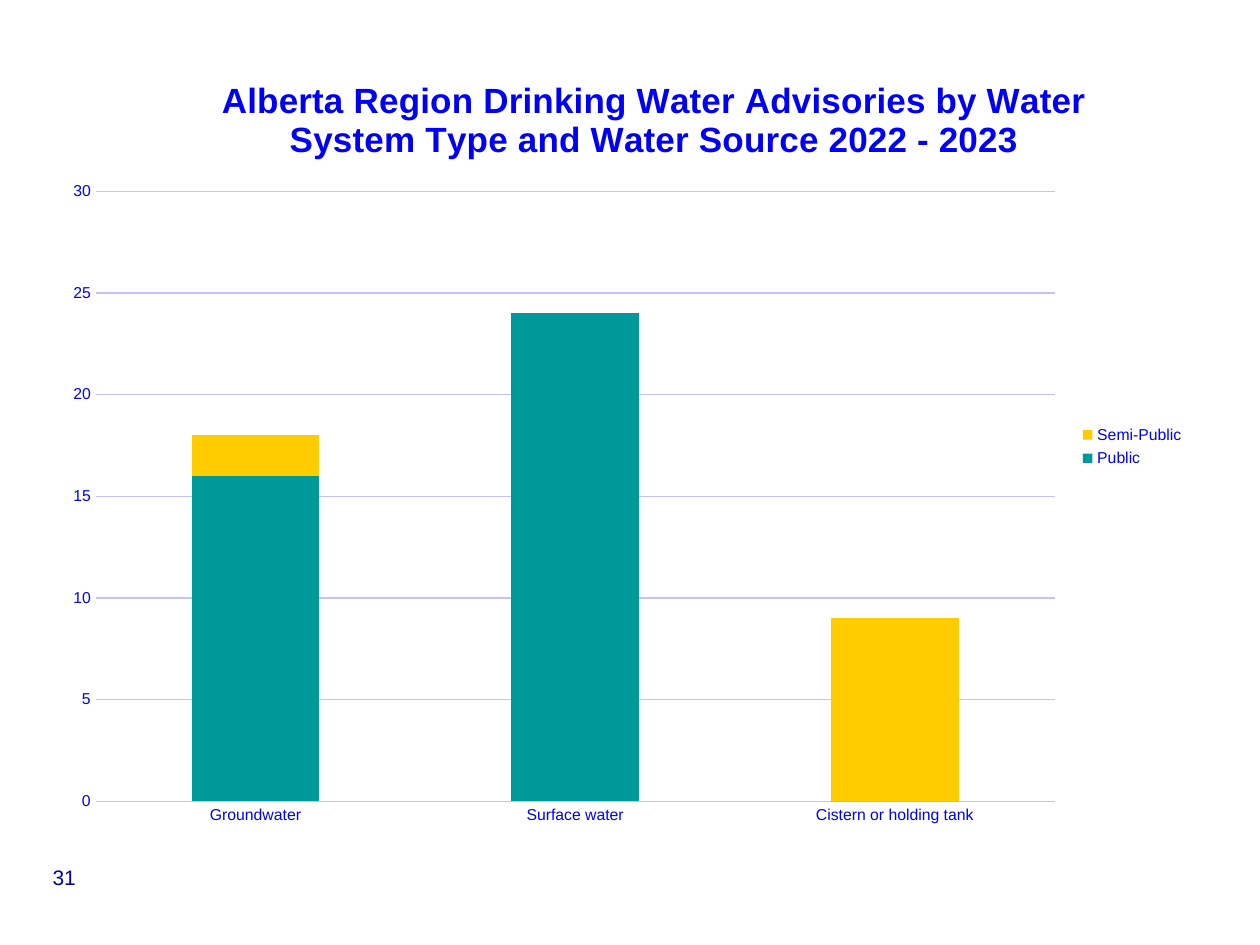
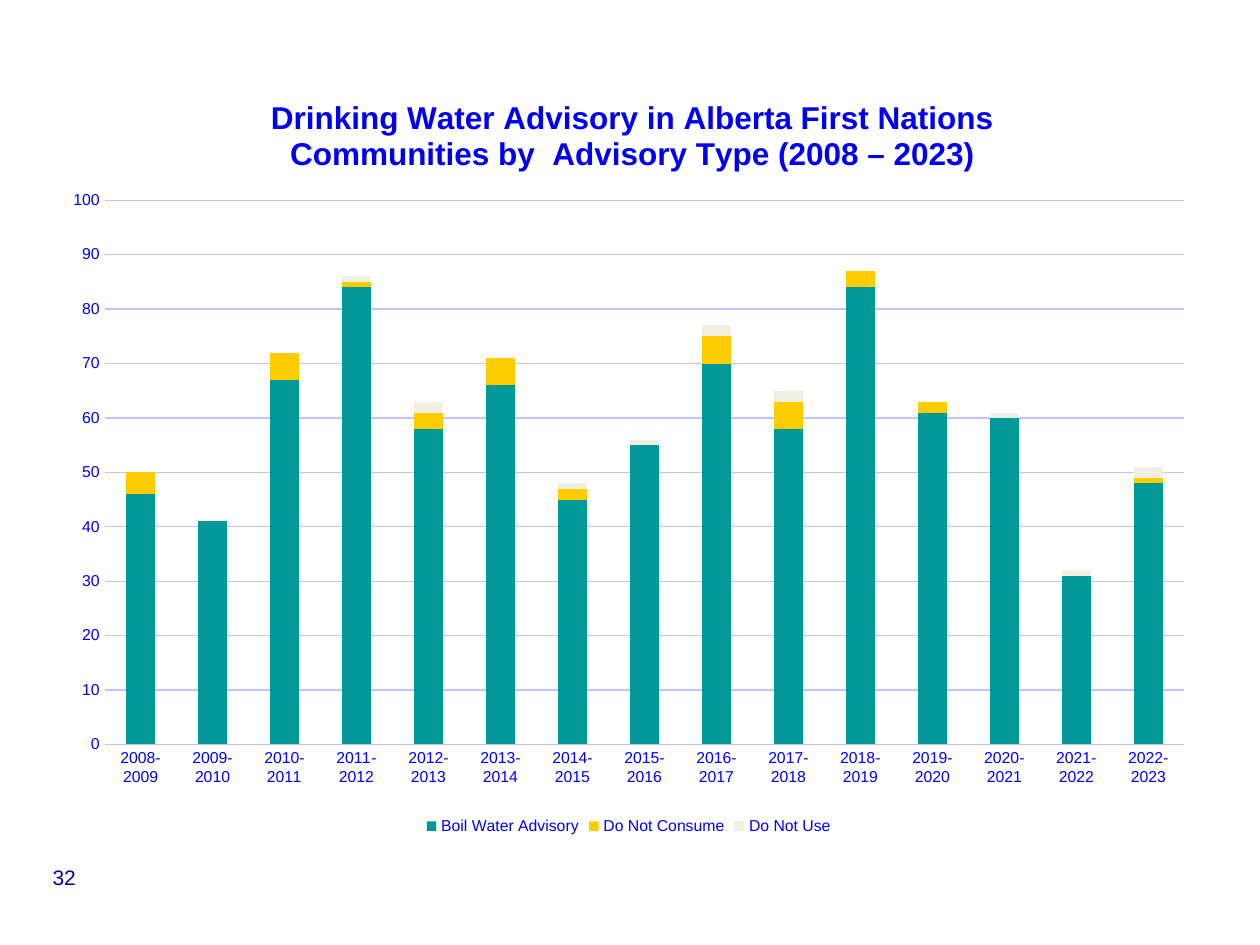
from lxml import etree
from pptx import Presentation
from pptx.chart.data import CategoryChartData
from pptx.dml.color import RGBColor
from pptx.enum.chart import XL_CHART_TYPE, XL_LEGEND_POSITION as LEGEND, XL_TICK_MARK
from pptx.enum.text import MSO_ANCHOR, PP_ALIGN
from pptx.oxml.ns import qn
from pptx.util import Inches, Pt

BLUE = RGBColor(0x00, 0x00, 0xF5)
NAVY = RGBColor(0x00, 0x00, 0xA3)
LAVENDER = RGBColor(0xC2, 0xC2, 0xFF)
TEAL = RGBColor(0x00, 0x99, 0x99)
YELLOW = RGBColor(0xFF, 0xCC, 0x00)
IVORY = RGBColor(0xF0, 0xF0, 0xE2)
SERIES_COLORS = [TEAL, YELLOW, IVORY]
FONT = "Arial"
LABEL_FONT = {"name": FONT, "size": Pt(9), "bold": False}
NUMBER_BOX = (0.04, 6.82, 0.94, 0.3)

ADVISORIES_BY_SOURCE = {
    "number": 31,
    "box": (0.4, 0.42, 9.1, 6.25),
    "title": ["Alberta Region Drinking Water Advisories by Water",
              "System Type and Water Source 2022 - 2023"],
    "title_size": 20,
    "title_at": (1.73, 0.6),
    "plot": (0.76, 1.52, 7.61, 4.84),
    "legend": LEGEND.RIGHT,
    "scale": (30, 5),
    "categories": ["Groundwater", "Surface water", "Cistern or holding tank"],
    "series": {"Public": [16, 24, 0], "Semi-Public": [2, 0, 9]},
}
ADVISORIES_BY_YEAR = {
    "number": 32,
    "box": (0.4, 0.5, 9.18, 6.17),
    "title": ["Drinking Water Advisory in Alberta First Nations",
              "Communities by  Advisory Type (2008 – 2023)"],
    "title_size": 18,
    "title_at": (2.12, 0.75),
    "plot": (0.83, 1.59, 8.57, 4.32),
    "legend": LEGEND.BOTTOM,
    "scale": (100, 10),
    "categories": [f"{year}-{year + 1}" for year in range(2008, 2023)],
    "series": {
        "Boil Water Advisory": [46, 41, 67, 84, 58, 66, 45, 55, 70, 58, 84, 61, 60, 31, 48],
        "Do Not Consume": [4, None, 5, 1, 3, 5, 2, 0, 5, 5, 3, 2, 0, 0, 1],
        "Do Not Use": [None, None, None, 1, 2, 0, 1, 1, 2, 2, 0, 0, 1, 1, 2],
    },
}


def set_font(font, color, formats):
    for name, value in formats.items():
        setattr(font, name, value)
    font.color.rgb = color


def set_line(line, color):
    line.color.rgb = color
    line.width = Pt(0.75)


def set_layout(parent, index, place, chart_box):
    """Fix a chart part at a place given in slide inches (left, top[, width, height])."""
    for old in parent.findall(qn("c:layout")):
        parent.remove(old)
    layout = etree.Element(qn("c:layout"))
    manual = etree.SubElement(layout, qn("c:manualLayout"))
    left, top, width, height = chart_box
    values = {"xMode": "edge", "yMode": "edge",
              "x": (place[0] - left) / width, "y": (place[1] - top) / height}
    if len(place) == 4:
        values = {"layoutTarget": "inner", **values,
                  "w": place[2] / width, "h": place[3] / height}
    for tag, value in values.items():
        etree.SubElement(manual, qn(f"c:{tag}")).set("val", str(value))
    parent.insert(index, layout)


def add_page_number(slide, number, box):
    tb = slide.shapes.add_textbox(*map(Inches, box))
    tf = tb.text_frame
    tf.word_wrap = True
    tf.vertical_anchor = MSO_ANCHOR.MIDDLE
    p = tf.paragraphs[0]
    p.alignment = PP_ALIGN.CENTER
    p.line_spacing = 0.9
    r = p.add_run()
    r.text = str(number)
    set_font(r.font, NAVY, {"name": FONT, "size": Pt(12)})


def format_title(chart, content):
    title = chart.chart_title
    tf = title.text_frame
    for i, line in enumerate(content["title"]):
        p = tf.add_paragraph() if i else tf.paragraphs[0]
        p.alignment = PP_ALIGN.CENTER
        r = p.add_run()
        r.text = line
        set_font(r.font, BLUE, {"name": FONT, "size": Pt(content["title_size"]), "bold": True})
    title.include_in_layout = False
    set_layout(chart._chartSpace.chart.find(qn("c:title")), 1,
               content["title_at"], content["box"])


def format_axes(chart, maximum, step):
    for axis in (chart.category_axis, chart.value_axis):
        axis.major_tick_mark = axis.minor_tick_mark = XL_TICK_MARK.NONE
        set_font(axis.tick_labels.font, BLUE, LABEL_FONT)
    set_line(chart.category_axis.format.line, LAVENDER)
    value_axis = chart.value_axis
    value_axis.minimum_scale = 0
    value_axis.maximum_scale = maximum
    value_axis.major_unit = step
    value_axis.format.line.fill.background()
    set_line(value_axis.major_gridlines.format.line, LAVENDER)


def add_stacked_chart(slide, content):
    data = CategoryChartData()
    data.categories = content["categories"]
    for name, values in content["series"].items():
        data.add_series(name, values)
    chart = slide.shapes.add_chart(XL_CHART_TYPE.COLUMN_STACKED,
                                   *map(Inches, content["box"]), data).chart
    set_font(chart.font, BLUE, {"name": FONT, "size": Pt(10)})
    format_title(chart, content)
    format_axes(chart, *content["scale"])

    plot = chart.plots[0]
    plot.gap_width = 150
    plot.overlap = 100
    plot.vary_by_categories = False
    for series, color in zip(plot.series, SERIES_COLORS):
        series.format.fill.solid()
        series.format.fill.fore_color.rgb = color
    set_layout(chart._chartSpace.chart.plotArea, 0, content["plot"], content["box"])

    chart.has_legend = True
    chart.legend.position = content["legend"]
    chart.legend.include_in_layout = False
    set_font(chart.legend.font, BLUE, LABEL_FONT)


def add_chart_slide(prs, content):
    slide = prs.slides.add_slide(prs.slide_layouts[6])
    add_page_number(slide, content["number"], NUMBER_BOX)
    add_stacked_chart(slide, content)


def main():
    prs = Presentation()
    prs.slide_width, prs.slide_height = Inches(10), Inches(7.5)
    for content in (ADVISORIES_BY_SOURCE, ADVISORIES_BY_YEAR):
        add_chart_slide(prs, content)
    prs.save("out.pptx")


if __name__ == "__main__":
    main()
